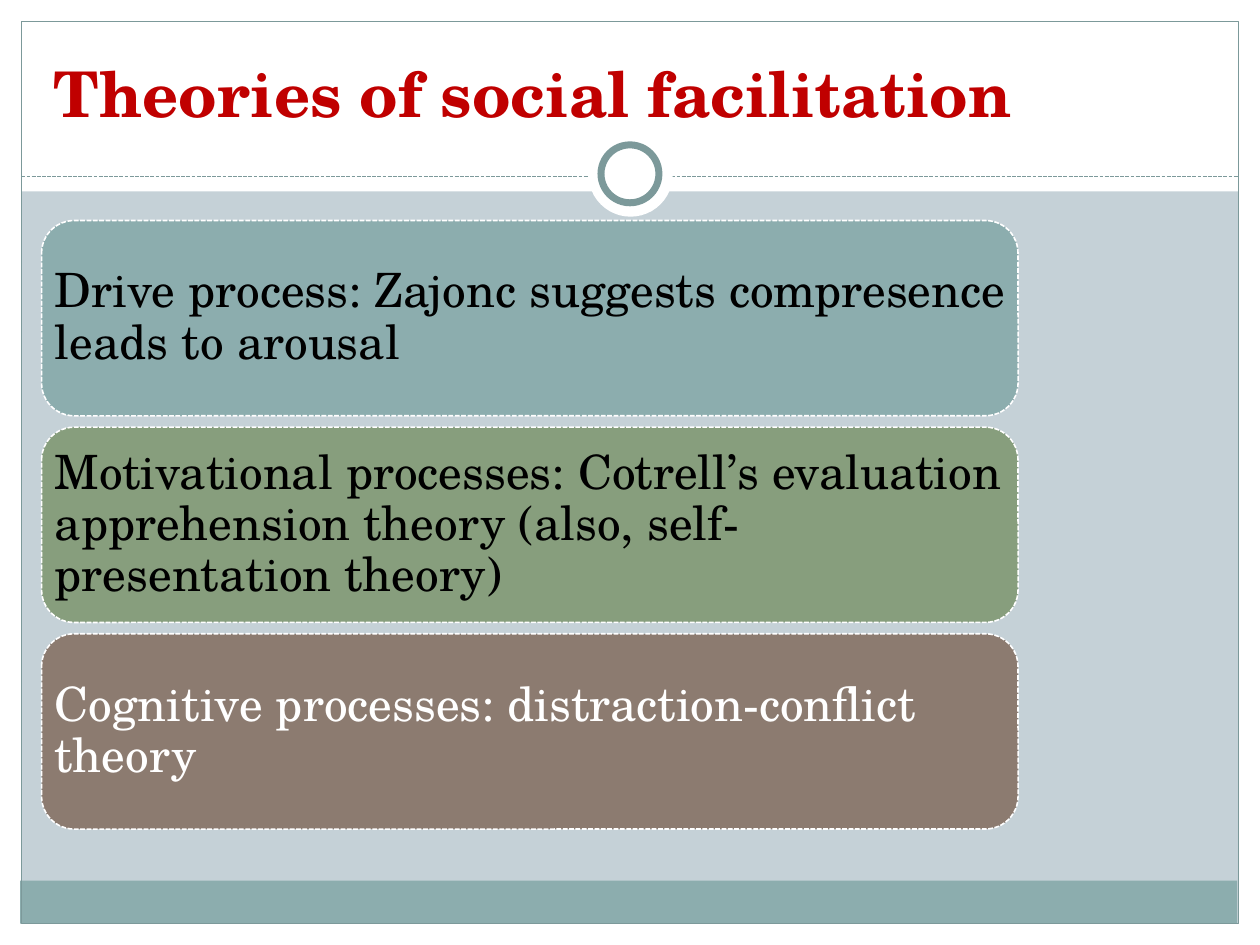
"""Build the slide on theories of social facilitation."""
from dataclasses import dataclass
from typing import Optional

from pptx import Presentation
from pptx.dml.color import RGBColor
from pptx.enum.dml import MSO_LINE
from pptx.enum.shapes import MSO_CONNECTOR, MSO_SHAPE
from pptx.enum.text import MSO_ANCHOR, PP_ALIGN
from pptx.oxml.ns import qn
from pptx.util import Inches, Pt
from lxml.etree import SubElement

FONT = "TeX Gyre Schola"
COLORS = {
    "background": "C5D1D7",
    "white": "FFFFFF",
    "black": "000000",
    "teal": "8CADAE",
    "border": "7C999A",
    "green": "879E7D",
    "brown": "8C7B70",
    "title": "C00000",
}
CARD_LEFT, CARD_TOP, CARD_WIDTH, CARD_HEIGHT, CARD_GAP = 0.33, 1.75, 7.75, 1.55, 0.09


@dataclass
class Block:
    left: float
    top: float
    width: float
    height: float
    fill: Optional[str] = None
    line: Optional[str] = None
    weight: float = 0.75
    kind: MSO_SHAPE = MSO_SHAPE.RECTANGLE


@dataclass
class Card:
    text: str
    fill: str
    color: str


FRAME = [
    Block(0, 7.33, 10, 0.17, "white"),
    Block(0, 0, 10, 1.52, "white"),
    Block(0, 0, 0.17, 7.5, "white"),
    Block(9.83, 0, 0.17, 7.5, "white"),
    Block(0.16, 6.99, 9.66, 0.34, "teal"),
    Block(0.17, 0.17, 9.66, 7.16, line="border"),
]
RING = [
    Block(4.67, 1.05, 0.67, 0.67, "white", kind=MSO_SHAPE.OVAL),
    Block(4.77, 1.15, 0.46, 0.46, "white", "border", 4, MSO_SHAPE.OVAL),
]
CARDS = [
    Card("Drive process: Zajonc suggests compresence leads to arousal", "teal", "black"),
    Card("Motivational processes: Cotrell’s evaluation apprehension theory "
         "(also, self-presentation theory)", "green", "black"),
    Card("Cognitive processes: distraction-conflict theory", "brown", "white"),
]


def rgb(name: str) -> RGBColor:
    return RGBColor.from_string(COLORS[name])


def add_block(s, block: Block):
    sp = s.shapes.add_shape(block.kind, Inches(block.left), Inches(block.top),
                            Inches(block.width), Inches(block.height))
    sp.shadow.inherit = False
    if block.fill:
        sp.fill.solid()
        sp.fill.fore_color.rgb = rgb(block.fill)
    else:
        sp.fill.background()
    if block.line:
        sp.line.color.rgb = rgb(block.line)
        sp.line.width = Pt(block.weight)
    else:
        sp.line.fill.background()
    return sp


def add_divider(s, left: float, right: float, top: float) -> None:
    cn = s.shapes.add_connector(MSO_CONNECTOR.STRAIGHT, Inches(left), Inches(top),
                                Inches(right), Inches(top))
    cn.line.color.rgb = rgb("border")
    cn.line.width = Pt(0.75)
    cn.line.dash_style = MSO_LINE.SQUARE_DOT
    SubElement(cn._element.spPr, qn("a:effectLst"))


def set_text(sp, text: str, size: float, color: str, anchor: MSO_ANCHOR,
             bold: bool = False):
    tf = sp.text_frame
    tf.text = text
    tf.word_wrap = True
    tf.vertical_anchor = anchor
    p = tf.paragraphs[0]
    p.alignment = PP_ALIGN.LEFT
    font = p.runs[0].font
    font.name, font.size, font.bold = FONT, Pt(size), bold
    font.color.rgb = rgb(color)
    return tf


def add_title(s, text: str) -> None:
    sp = s.shapes.add_textbox(Inches(0.33), Inches(0.25), Inches(9.33), Inches(0.83))
    set_text(sp, text, 36, "title", MSO_ANCHOR.BOTTOM, bold=True)


def add_card(s, card: Card, top: float) -> None:
    sp = add_block(s, Block(CARD_LEFT, top, CARD_WIDTH, CARD_HEIGHT, card.fill,
                            "white", 0.9, MSO_SHAPE.ROUNDED_RECTANGLE))
    sp.line.dash_style = MSO_LINE.SQUARE_DOT
    tf = set_text(sp, card.text, 27, card.color, MSO_ANCHOR.MIDDLE)
    tf.margin_left = tf.margin_right = Inches(0.03)
    tf.margin_top = tf.margin_bottom = Inches(0.03)
    tf.paragraphs[0].line_spacing = 0.9


def main() -> None:
    prs = Presentation()
    prs.slide_width, prs.slide_height = Inches(10), Inches(7.5)
    s = prs.slides.add_slide(prs.slide_layouts[6])
    s.background.fill.solid()
    s.background.fill.fore_color.rgb = rgb("background")
    for block in FRAME:
        add_block(s, block)
    add_divider(s, 0.17, 9.83, 1.4)
    for block in RING:
        add_block(s, block)
    add_title(s, "Theories of social facilitation")
    for i, card in enumerate(CARDS):
        add_card(s, card, CARD_TOP + i * (CARD_HEIGHT + CARD_GAP))
    prs.save("out.pptx")


if __name__ == "__main__":
    main()
